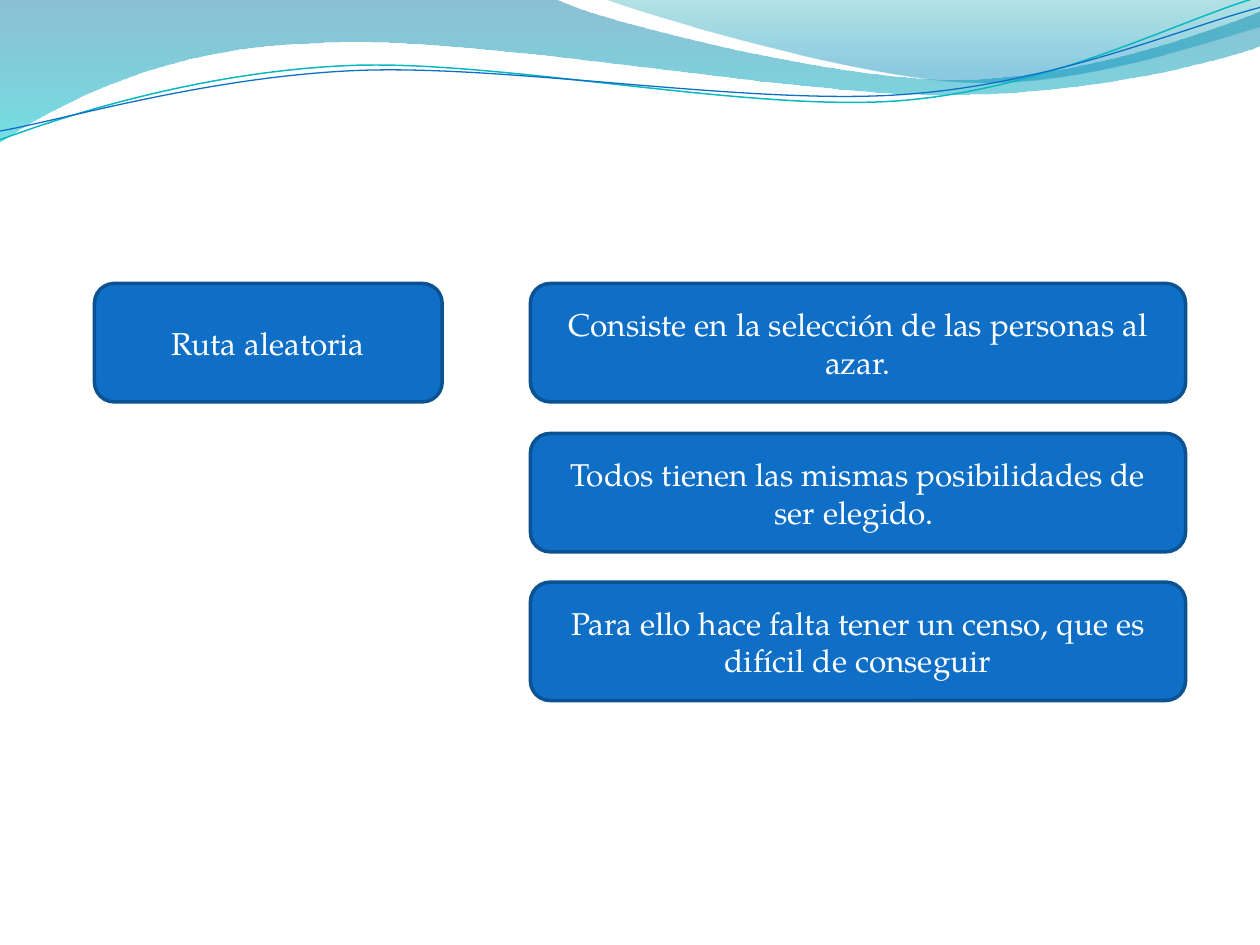
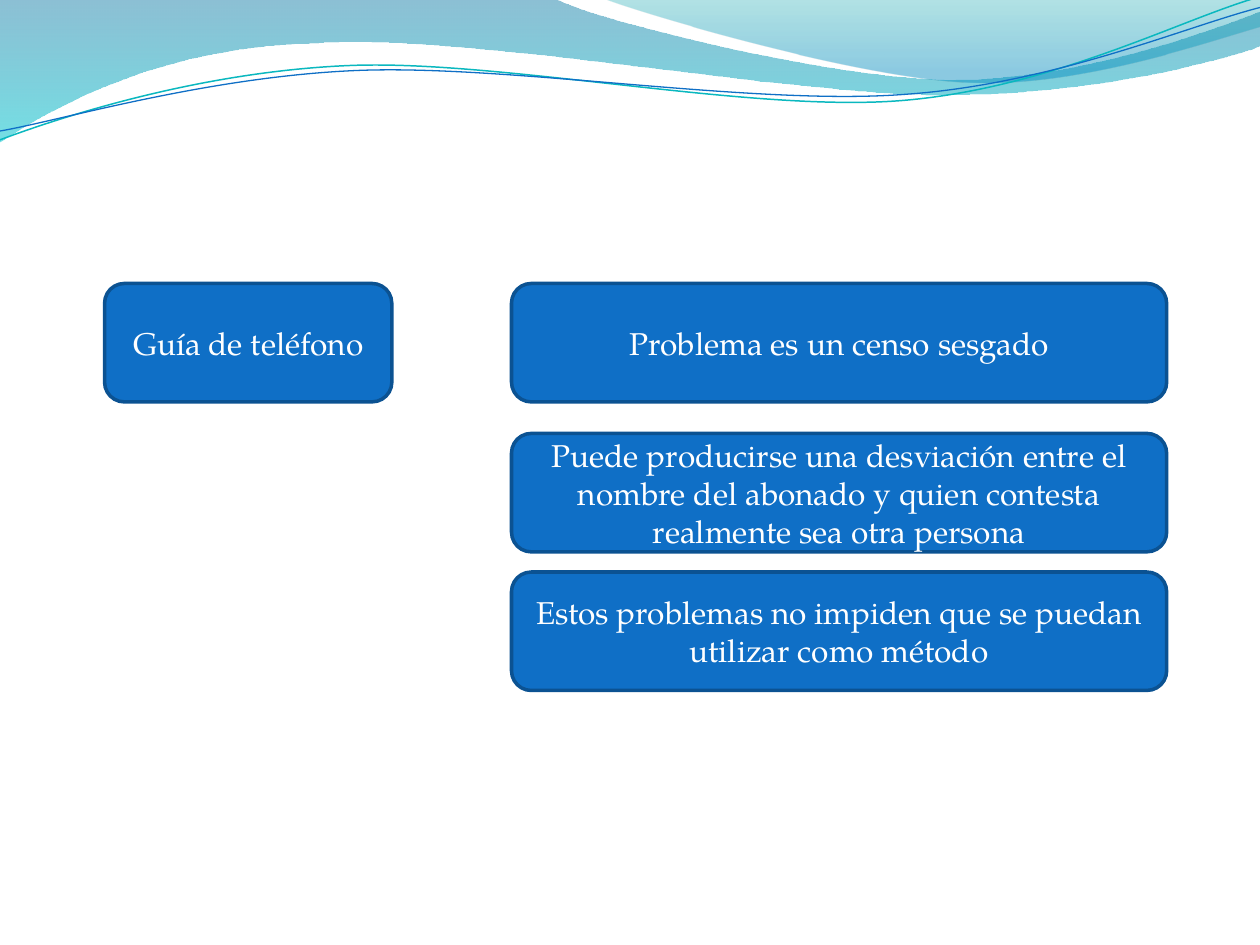
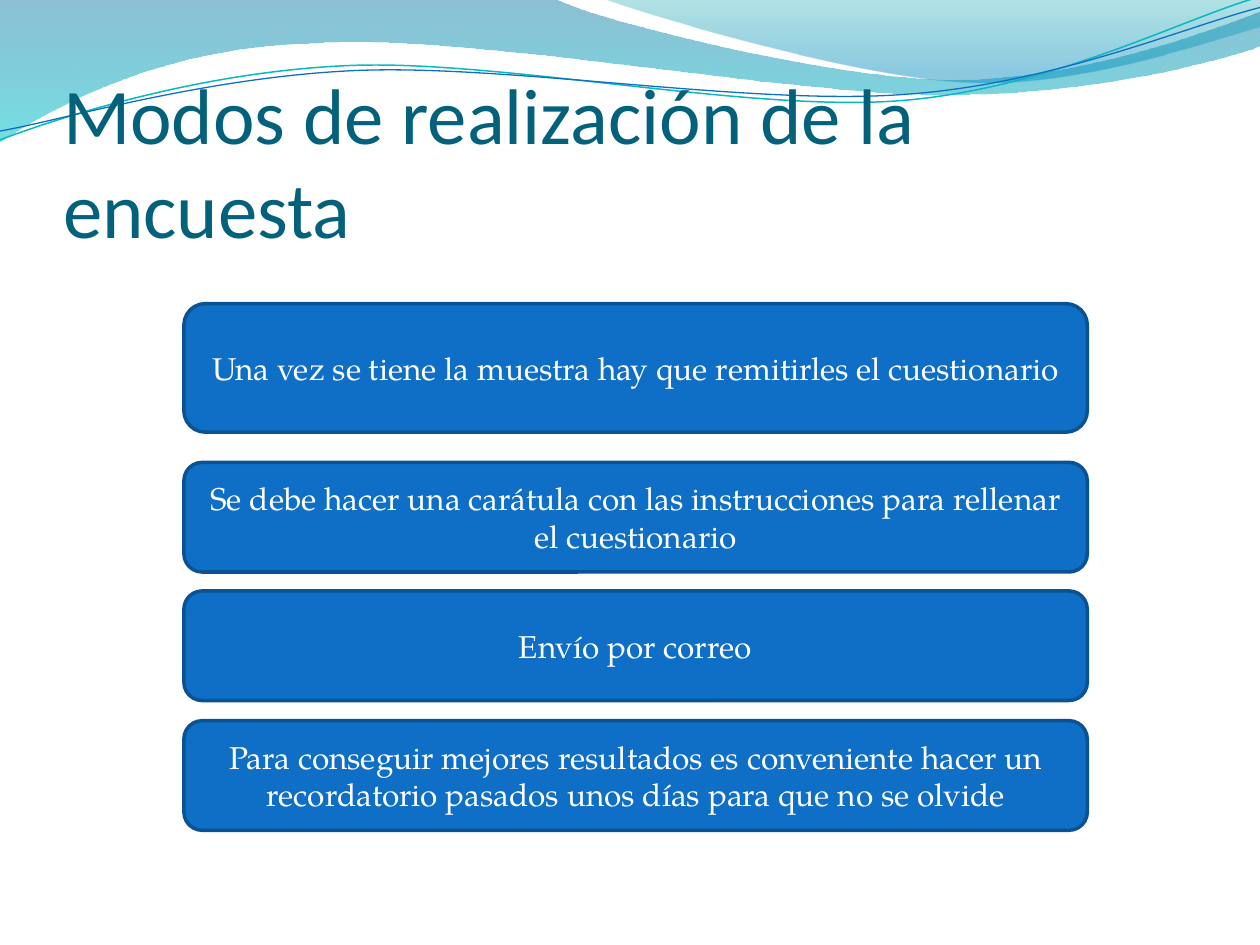
"""Builds three slides on survey sampling and survey delivery under a wave header."""
import dataclasses
import math
import typing

import lxml.etree
import pptx
import pptx.dml.color
import pptx.enum.shapes
import pptx.enum.text
import pptx.oxml.ns
import pptx.presentation
import pptx.shapes.autoshape
import pptx.slide
import pptx.text.text
import pptx.util

Point = tuple[float, float]
Piece = tuple[Point, ...]

BODY_FONT = "TeX Gyre Pagella"
TITLE_FONT = "Calibri"
BLUE = "0F6FC6"
DARK_BLUE = "0B5292"
TEAL = "0AB8BF"
TITLE_COLOUR = "04617B"
WHITE = "FFFFFF"
LINE_TILT = -2.7


class Stop(typing.NamedTuple):
    position: float
    colour: str
    opacity: int


@dataclasses.dataclass(frozen=True)
class Wave:
    """Outline whose one-point pieces are lines and three-point pieces are Bézier curves."""
    start: Point
    pieces: tuple[Piece, ...]
    stops: tuple[Stop, ...] = ()
    line: str = ""
    line_width: float = 0
    tilt: float = 0
    pivot: Point = (0, 0)


@dataclasses.dataclass(frozen=True)
class Stack:
    """Column of equal boxes, one for each top."""
    left: float
    width: float
    height: float
    tops: tuple[float, ...]
    texts: tuple[str, ...]


@dataclasses.dataclass(frozen=True)
class Page:
    stacks: tuple[Stack, ...]
    title: str = ""


WAVES = (
    Wave(
        (0, 0),
        (
            ((4.4, -0.01),),
            ((4.76, 0.17), (6.64, 0.63), (7.58, 0.63)),
            ((8.53, 0.63), (9.58, 0.26), (10, 0.09)),
            ((10.01, 0.36),),
            ((9.83, 0.44), (8.7, 0.76), (7.46, 0.75)),
            ((6.22, 0.75), (3.82, 0.28), (2.57, 0.34)),
            ((1.29, 0.36), (0.46, 0.83), (-0.01, 1.13)),
            ((0, 0),),
        ),
        stops=(Stop(0, "0074A1", 45), Stop(1, "00C6CF", 55)),
    ),
    Wave(
        (4.79, -0.01),
        (
            ((5.09, 0.11), (6.82, 0.62), (7.69, 0.65)),
            ((8.56, 0.69), (9.61, 0.32), (10, 0.21)),
            ((10, 0),),
            ((4.79, -0.01),),
        ),
        stops=(Stop(0, "00A1A9", 30), Stop(0.8, "008BBF", 45)),
    ),
    Wave(
        (0, 1.11),
        (
            ((0.48, 0.93), (1.58, 0.57), (2.77, 0.52)),
            ((3.95, 0.47), (5.93, 0.89), (7.13, 0.8)),
            ((8.33, 0.71), (9.38, 0.15), (9.98, -0.02)),
        ),
        line=TEAL,
        line_width=0.85,
        tilt=LINE_TILT,
        pivot=(4.99, 0.57),
    ),
    Wave(
        (0, 1.04),
        (
            ((0.47, 0.96), (1.64, 0.61), (2.83, 0.56)),
            ((4.03, 0.51), (5.97, 0.84), (7.17, 0.75)),
            ((8.36, 0.67), (9.41, 0.21), (10, 0.06)),
        ),
        line=BLUE,
        line_width=0.75,
        tilt=LINE_TILT,
        pivot=(5, 0.59),
    ),
)

PAGES = (
    Page((
        Stack(0.75, 2.76, 0.94, (2.25,), ("Ruta aleatoria",)),
        Stack(4.21, 5.2, 0.94, (2.25, 3.44, 4.62), (
            "Consiste en la selección de las personas al azar.",
            "Todos tienen las mismas posibilidades de ser elegido. ",
            "Para ello hace falta tener un censo, que es difícil de conseguir",
        )),
    )),
    Page((
        Stack(0.83, 2.28, 0.94, (2.25,), ("Guía de teléfono",)),
        Stack(4.06, 5.2, 0.94, (2.25, 3.44, 4.54), (
            "Problema es un censo sesgado",
            "Puede producirse una desviación entre el nombre del abonado "
            "y quien contesta realmente sea otra persona",
            "Estos problemas no impiden que se puedan utilizar como método",
        )),
    )),
    Page((
        Stack(1.46, 7.17, 1.02, (2.41,), (
            "Una vez se tiene la muestra hay que remitirles el cuestionario",
        )),
        Stack(1.46, 7.17, 0.87, (3.67, 4.69, 5.72), (
            "Se debe hacer una carátula con las instrucciones para rellenar el cuestionario",
            "Envío por correo",
            "Para conseguir mejores resultados es conveniente hacer un recordatorio "
            "pasados unos días para que no se olvide",
        )),
    ), title="Modos de realización de la encuesta"),
)


def rgb(colour: str) -> pptx.dml.color.RGBColor:
    return pptx.dml.color.RGBColor.from_string(colour)


def inches(*lengths: float) -> tuple[pptx.util.Length, ...]:
    return tuple(pptx.util.Inches(length) for length in lengths)


def level(point: Point, wave: Wave) -> Point:
    angle = math.radians(-wave.tilt)
    x, y = point[0] - wave.pivot[0], point[1] - wave.pivot[1]
    return (
        wave.pivot[0] + x * math.cos(angle) - y * math.sin(angle),
        wave.pivot[1] + x * math.sin(angle) + y * math.cos(angle),
    )


def bend_curves(shape: pptx.shapes.autoshape.Shape, pieces: tuple[Piece, ...]) -> None:
    segments = iter(list(shape.element.iter(pptx.oxml.ns.qn("a:lnTo"))))
    for piece in pieces:
        first, *others = [next(segments) for _ in piece]
        if others:
            curve = lxml.etree.Element(pptx.oxml.ns.qn("a:cubicBezTo"))
            first.addprevious(curve)
            for segment in (first, *others):
                curve.append(segment[0])
                segment.getparent().remove(segment)


def fill_gradient(shape: pptx.shapes.autoshape.Shape, stops: tuple[Stop, ...]) -> None:
    shape.fill.gradient()
    shape.fill.gradient_angle = 270
    for target, stop in zip(shape.fill.gradient_stops, stops):
        target.position = stop.position
        target.color.rgb = rgb(stop.colour)
    tag = pptx.oxml.ns.qn("a:srgbClr")
    for colour, stop in zip(shape.element.spPr.iter(tag), stops):
        alpha = lxml.etree.SubElement(colour, pptx.oxml.ns.qn("a:alpha"))
        alpha.set("val", str(stop.opacity * 1000))


def draw_wave(slide: pptx.slide.Slide, wave: Wave) -> pptx.shapes.autoshape.Shape:
    points = [wave.start, *(point for piece in wave.pieces for point in piece)]
    start, *rest = [inches(*level(point, wave)) for point in points]
    builder = slide.shapes.build_freeform(*start)
    builder.add_line_segments(rest, close=bool(wave.stops))
    shape = builder.convert_to_shape()
    bend_curves(shape, wave.pieces)
    shape.rotation = wave.tilt
    shape.shadow.inherit = False
    if wave.stops:
        fill_gradient(shape, wave.stops)
        shape.line.fill.background()
    else:
        shape.fill.background()
        shape.line.color.rgb = rgb(wave.line)
        shape.line.width = pptx.util.Pt(wave.line_width)
    return shape


def add_master_waves(deck: pptx.presentation.Presentation, slide: pptx.slide.Slide) -> None:
    tree = deck.slide_master.shapes.element
    for order, wave in enumerate(WAVES):
        element = draw_wave(slide, wave).element
        element.nvSpPr.cNvPr.set("id", str(100 + order))
        tree.insert(2 + order, element)


def add_run(frame: pptx.text.text.TextFrame, text: str, font: str, size: float,
            colour: str, align: pptx.enum.text.PP_ALIGN) -> None:
    paragraph = frame.paragraphs[0]
    paragraph.alignment = align
    run = paragraph.add_run()
    run.text = text
    run.font.name = font
    run.font.size = pptx.util.Pt(size)
    run.font.color.rgb = rgb(colour)


def draw_stack(slide: pptx.slide.Slide, stack: Stack) -> None:
    for top, text in zip(stack.tops, stack.texts):
        box = slide.shapes.add_shape(
            pptx.enum.shapes.MSO_SHAPE.ROUNDED_RECTANGLE,
            *inches(stack.left, top, stack.width, stack.height),
        )
        box.shadow.inherit = False
        box.fill.solid()
        box.fill.fore_color.rgb = rgb(BLUE)
        box.line.color.rgb = rgb(DARK_BLUE)
        box.line.width = pptx.util.Pt(2)
        frame = box.text_frame
        frame.word_wrap = True
        frame.vertical_anchor = pptx.enum.text.MSO_ANCHOR.MIDDLE
        add_run(frame, text, BODY_FONT, 18, WHITE, pptx.enum.text.PP_ALIGN.CENTER)


def write_title(slide: pptx.slide.Slide, text: str) -> None:
    title = slide.shapes.title
    title.left, title.top, title.width, title.height = inches(0.5, 0.77, 9.08, 1.25)
    frame = title.text_frame
    frame.word_wrap = True
    frame.auto_size = pptx.enum.text.MSO_AUTO_SIZE.NONE
    frame.vertical_anchor = pptx.enum.text.MSO_ANCHOR.BOTTOM
    frame.margin_left, frame.margin_top, frame.margin_right, frame.margin_bottom = inches(
        0, 0.05, 0, 0)
    add_run(frame, text, TITLE_FONT, 45, TITLE_COLOUR, pptx.enum.text.PP_ALIGN.LEFT)


def main() -> None:
    deck = pptx.Presentation()
    deck.slide_width, deck.slide_height = inches(10, 7.5)
    for page in PAGES:
        layout = "Title Only" if page.title else "Blank"
        slide = deck.slides.add_slide(deck.slide_layouts.get_by_name(layout))
        if page.title:
            write_title(slide, page.title)
        for stack in page.stacks:
            draw_stack(slide, stack)
    add_master_waves(deck, deck.slides[0])
    deck.save("out.pptx")


if __name__ == "__main__":
    main()
